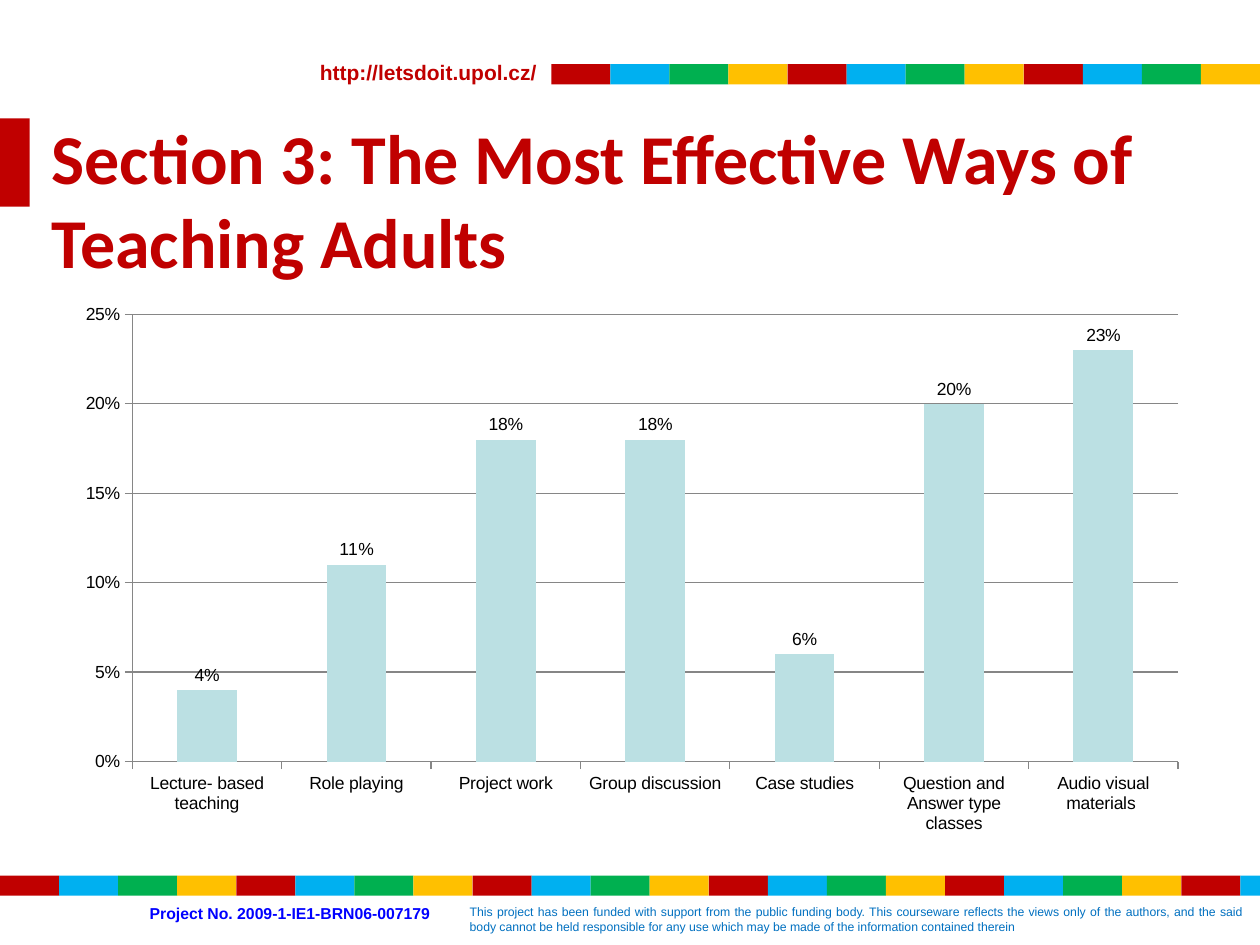
from pptx import Presentation
from pptx.chart.data import CategoryChartData
from pptx.dml.color import RGBColor
from pptx.enum.chart import XL_CHART_TYPE, XL_LABEL_POSITION, XL_TICK_MARK
from pptx.enum.shapes import MSO_SHAPE
from pptx.enum.text import MSO_ANCHOR, PP_ALIGN
from pptx.util import Inches, Pt

COLUMNS = XL_CHART_TYPE.COLUMN_CLUSTERED
OUTSIDE_END = XL_LABEL_POSITION.OUTSIDE_END
TICK_OUT, TICK_NONE = XL_TICK_MARK.OUTSIDE, XL_TICK_MARK.NONE
RECTANGLE = MSO_SHAPE.RECTANGLE
TOP = MSO_ANCHOR.TOP
LEFT, JUSTIFY = PP_ALIGN.LEFT, PP_ALIGN.JUSTIFY

COLOURS = {
    "red": "C00000", "sky": "00B0F0", "green": "00B050", "amber": "FFC000",
    "link": "0000FF", "notice": "0070C0", "bar": "BBE0E3",
    "axis": "868686", "black": "000000",
}
STRIPE = ["red", "sky", "green", "amber"]
TILE_WIDTH = 15 / 32
TILE_HEIGHT = 0.16

RESULTS = {
    "Lecture- based teaching": 0.04,
    "Role playing": 0.11,
    "Project work": 0.18,
    "Group discussion": 0.18,
    "Case studies": 0.06,
    "Question and Answer type classes": 0.2,
    "Audio visual materials ": 0.23,
}
NOTICE = (
    "This project has been funded with support from the public funding body. "
    "This courseware reflects the views only of the authors, and the said body "
    "cannot be held responsible for any use which may be made of the information "
    "contained therein "
)


def colour(name):
    return RGBColor.from_string(COLOURS[name])


def set_font(font, colour_name, **values):
    for key, value in values.items():
        setattr(font, key, value)
    font.color.rgb = colour(colour_name)


def add_block(slide, left, top, width, height, colour_name):
    block = slide.shapes.add_shape(
        RECTANGLE, Inches(left), Inches(top), Inches(width), Inches(height))
    block.shadow.inherit = False
    block.fill.solid()
    block.fill.fore_color.rgb = colour(colour_name)
    block.line.fill.background()


def add_stripe(slide, left, top, count):
    """Draw a row of tiles that cycles through the stripe colours."""
    for index in range(count):
        add_block(slide, left + index * TILE_WIDTH, top, TILE_WIDTH, TILE_HEIGHT,
                  STRIPE[index % len(STRIPE)])


def add_text(slide, area, text, colour_name, size, bold=False, align=LEFT, wrap=True):
    box = slide.shapes.add_textbox(*map(Inches, area))
    box.text_frame.word_wrap = wrap
    para = box.text_frame.paragraphs[0]
    para.alignment = align
    span = para.add_run()
    span.text = text
    set_font(span.font, colour_name, name="Arial", size=Pt(size), bold=bold)


def set_title(slide, text):
    title = slide.shapes.title
    title.left, title.top, title.width, title.height = map(
        Inches, (0.31, 0.86, 9.19, 1.02))
    title.text_frame.text = text
    title.text_frame.vertical_anchor = TOP
    para = title.text_frame.paragraphs[0]
    para.alignment = LEFT
    for span in para.runs:
        set_font(span.font, "red", name="Calibri", size=Pt(40), bold=True)


def style_line(line):
    line.color.rgb = colour("axis")
    line.width = Pt(0.75)


def add_results_chart(slide):
    data = CategoryChartData(number_format="0%")
    data.categories = list(RESULTS)
    data.add_series("Series 1", list(RESULTS.values()))
    area = map(Inches, (0.5, 2.33, 9.03, 4.37))
    chart = slide.shapes.add_chart(COLUMNS, *area, data).chart
    chart.has_title = False
    chart.has_legend = False
    set_font(chart.font, "black", name="Arial", size=Pt(10))

    for axis in (chart.category_axis, chart.value_axis):
        axis.major_tick_mark = TICK_OUT
        axis.minor_tick_mark = TICK_NONE
        style_line(axis.format.line)
    values = chart.value_axis
    values.minimum_scale, values.maximum_scale, values.major_unit = 0, 0.25, 0.05
    values.has_major_gridlines = True
    style_line(values.major_gridlines.format.line)
    values.tick_labels.number_format = "0%"
    values.tick_labels.number_format_is_linked = False

    plot = chart.plots[0]
    plot.gap_width = 150
    plot.vary_by_categories = False
    bars = plot.series[0]
    bars.format.fill.solid()
    bars.format.fill.fore_color.rgb = colour("bar")
    labels = bars.data_labels
    labels.show_value = True
    labels.position = OUTSIDE_END
    labels.number_format = "0%"
    labels.number_format_is_linked = False


def main():
    deck = Presentation()
    deck.slide_width, deck.slide_height = Inches(10), Inches(7.5)
    slide = deck.slides.add_slide(deck.slide_layouts[5])

    add_text(slide, (2.44, 0.42, 1.95, 0.3), "http://letsdoit.upol.cz/",
             "red", 12, bold=True, wrap=False)
    add_text(slide, (3.63, 7.13, 6.33, 0.34), NOTICE, "notice", 7, align=JUSTIFY)
    add_text(slide, (1.09, 7.12, 2.66, 0.25), "Project No. 2009-1-IE1-BRN06-007179",
             "link", 9, bold=True)
    add_stripe(slide, 10 - 12 * TILE_WIDTH, 0.51, 12)
    add_stripe(slide, 0, 6.95, 22)
    add_block(slide, -TILE_WIDTH / 2, 0.94, TILE_WIDTH, 0.7, "red")
    set_title(slide, "Section 3: The Most Effective Ways of\vTeaching Adults")
    add_results_chart(slide)
    deck.save("out.pptx")


if __name__ == "__main__":
    main()
